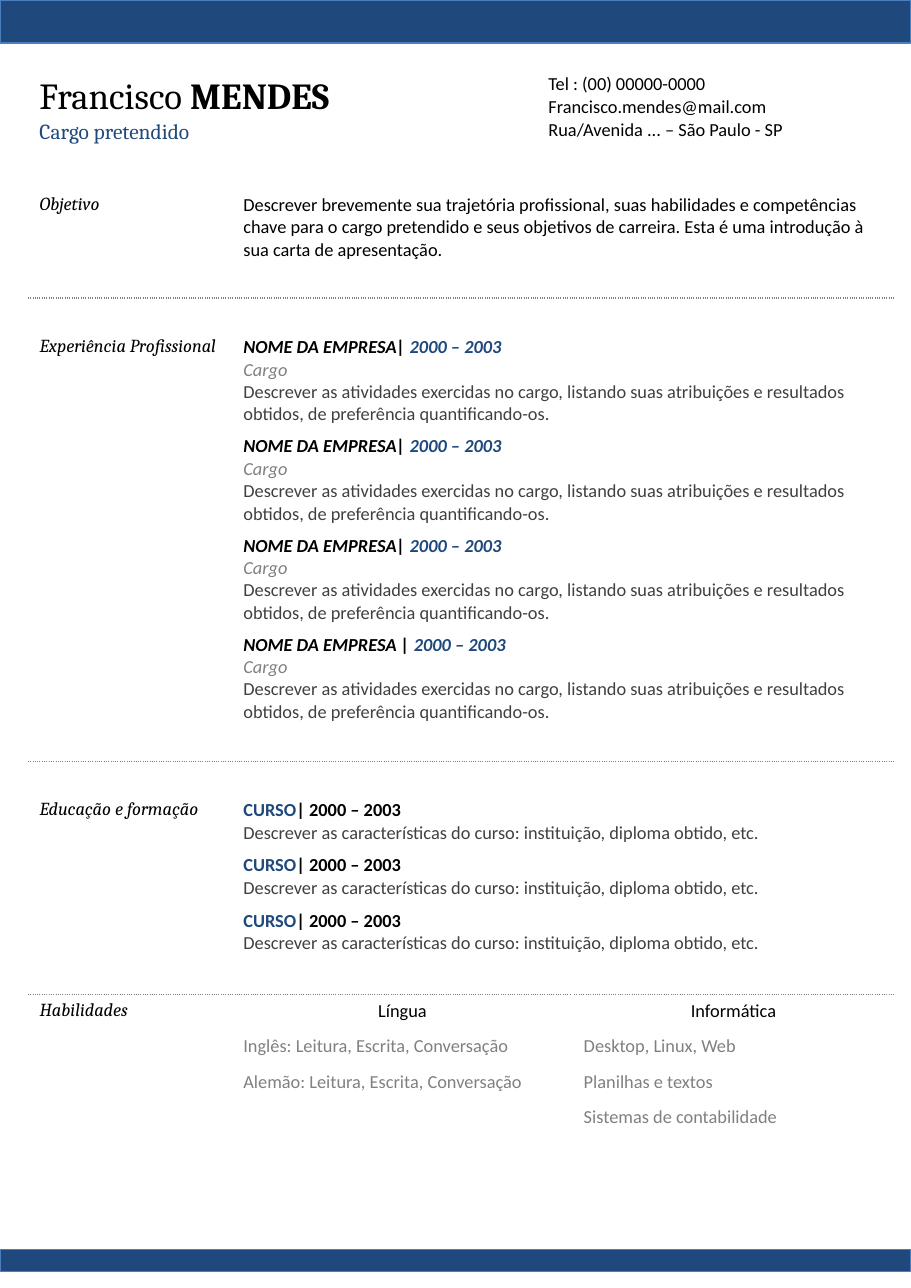
from dataclasses import dataclass

from lxml import etree
from pptx import Presentation
from pptx.dml.color import RGBColor
from pptx.enum import shapes, text
from pptx.oxml import ns
from pptx.util import Pt

NAVY = RGBColor(0x1F, 0x49, 0x7D)
BAND_EDGE = RGBColor(0x4B, 0x7E, 0xBC)
BLACK = RGBColor(0, 0, 0)
DARK_GREY = RGBColor(0x40, 0x40, 0x40)
GREY = RGBColor(0x80, 0x80, 0x80)
SERIF, SANS = "Cambria", "Calibri"
PAGE_WIDTH, PAGE_HEIGHT = 595.44, 841.68
LEFT, CONTACT_LEFT = 18.72, 351.36


@dataclass(frozen=True)
class Piece:
    """A stretch of text in one style."""
    wording: str
    color: RGBColor = BLACK
    font: str = SANS
    size: float = 12
    bold: bool = False
    italic: bool = False


Line = list[Piece]


@dataclass(frozen=True)
class Row:
    """A table row: height, side heading, content columns, ruled edge."""
    height: float
    heading: str = ""
    columns: tuple[list[Line], ...] = ()
    rule: str = ""
    centered: bool = False
    merged: bool = True


def write_lines(frame, lines: list[Line], centered: bool = False) -> None:
    for index, line in enumerate(lines):
        paragraph = frame.paragraphs[0] if index == 0 else frame.add_paragraph()
        paragraph.alignment = text.PP_ALIGN.CENTER if centered else text.PP_ALIGN.LEFT
        for piece in line:
            run = paragraph.add_run()
            run.text = piece.wording
            run.font.name, run.font.size = piece.font, Pt(piece.size)
            run.font.bold, run.font.italic = piece.bold, piece.italic
            run.font.color.rgb = piece.color


def add_band(slide, top: float, height: float) -> None:
    band = slide.shapes.add_shape(
        shapes.MSO_SHAPE.RECTANGLE, Pt(0), Pt(top), Pt(PAGE_WIDTH), Pt(height))
    band.shadow.inherit = False
    band.fill.solid()
    band.fill.fore_color.rgb = NAVY
    band.line.color.rgb = BAND_EDGE
    band.line.width = Pt(0.75)


def add_label(slide, left: float, top: float, width: float, height: float,
              line: Line) -> None:
    label = slide.shapes.add_textbox(Pt(left), Pt(top), Pt(width), Pt(height))
    label.text_frame.word_wrap = False
    label.text_frame.auto_size = text.MSO_AUTO_SIZE.SHAPE_TO_FIT_TEXT
    write_lines(label.text_frame, [line])


def rule_cell(cell, edge: str) -> None:
    """Draw a dotted border on the edge 'T' or 'B'."""
    border = etree.Element(ns.qn(f"a:ln{edge}"), w=str(Pt(1)))
    fill = etree.SubElement(border, ns.qn("a:solidFill"))
    etree.SubElement(fill, ns.qn("a:srgbClr"), val=str(GREY))
    etree.SubElement(border, ns.qn("a:prstDash"), val="sysDot")
    cell._tc.get_or_add_tcPr().insert(0, border)


def fill_row(table, index: int, row: Row) -> None:
    table.rows[index].height = Pt(row.height)
    cells = [table.cell(index, column) for column in range(3)]
    if row.merged:
        cells[1].merge(cells[2])
    heading = [[Piece(row.heading, font=SERIF, italic=True)]] if row.heading else []
    contents = [heading, *row.columns]
    for column, cell in enumerate(cells):
        cell.fill.background()
        cell.margin_bottom = Pt(0)
        if row.rule:
            rule_cell(cell, row.rule)
        lines = contents[column] if column < len(contents) else []
        if lines:
            write_lines(cell.text_frame, lines, row.centered and column > 0)
        else:
            # A small end mark keeps empty cells from stretching the row
            etree.SubElement(cell.text_frame.paragraphs[0]._p,
                             ns.qn("a:endParaRPr"), sz="1100")


def job_row(heading: str = "", separator: str = "| ") -> Row:
    return Row(64.8, heading, ([
        [Piece("NOME DA EMPRESA" + separator, bold=True, italic=True),
         Piece("2000 – 2003", NAVY, bold=True, italic=True)],
        [Piece("Cargo", GREY, italic=True)],
        [Piece("Descrever as atividades exercidas no cargo, listando suas "
               "atribuições e resultados obtidos, de preferência "
               "quantificando-os.", DARK_GREY)],
    ],))


def course_row(heading: str = "") -> Row:
    return Row(36, heading, ([
        [Piece("CURSO", NAVY, bold=True), Piece("| 2000 – 2003", bold=True)],
        [Piece("Descrever as características do curso: instituição, "
               "diploma obtido, etc.", DARK_GREY)],
    ],))


def skill_row(language: str, computing: str) -> Row:
    columns = tuple([[Piece(skill, GREY)]] if skill else []
                    for skill in (language, computing))
    return Row(23.1, columns=columns, merged=False)


OBJECTIVE = ("Descrever brevemente sua trajetória profissional, suas habilidades "
             "e competências chave para o cargo pretendido e seus objetivos de "
             "carreira. Esta é uma introdução à sua carta de apresentação.")
ROWS = [
    Row(51, "Objetivo", ([[Piece(OBJECTIVE)]],)),
    Row(20.6, rule="B"),
    Row(21.5, rule="T"),
    job_row("Experiência Profissional"),
    job_row(),
    job_row(),
    job_row(separator=" | "),
    Row(22.1, rule="B"),
    Row(21.4, rule="T"),
    course_row("Educação e formação"),
    course_row(),
    course_row(),
    Row(23.2, rule="B"),
    Row(23.1, "Habilidades", ([[Piece("Língua")]], [[Piece("Informática")]]),
        rule="T", centered=True, merged=False),
    skill_row("Inglês: Leitura, Escrita, Conversação", "Desktop, Linux, Web"),
    skill_row("Alemão: Leitura, Escrita, Conversação", "Planilhas e textos"),
    skill_row("", "Sistemas de contabilidade"),
]
COLUMN_WIDTHS = (133.2, 222.48, 210.24)
CONTACTS = [
    ("Tel : (00) 00000-0000", 118.8),
    ("Francisco.mendes@mail.com", 159.12),
    ("Rua/Avenida ... – São Paulo - SP", 169.2),
]


def main() -> None:
    resume = Presentation()
    resume.slide_width, resume.slide_height = Pt(PAGE_WIDTH), Pt(PAGE_HEIGHT)
    slide = resume.slides.add_slide(resume.slide_layouts[6])

    # Top and bottom bands
    add_band(slide, 0, 28.08)
    add_band(slide, 816.48, 14.4)

    # Name, position and contact details
    add_label(slide, LEFT, 43.92, 230.4, 36,
              [Piece("Francisco ", font=SERIF, size=24),
               Piece("MENDES", font=SERIF, size=24, bold=True)])
    add_label(slide, LEFT, 73.44, 123.12, 24.48,
              [Piece("Cargo pretendido", NAVY, SERIF, 14)])
    for index, (contact, width) in enumerate(CONTACTS):
        add_label(slide, CONTACT_LEFT, 43.92 + 14.76 * index, width, 21.6,
                  [Piece(contact)])

    # Résumé sections
    sections = slide.shapes.add_table(
        len(ROWS), len(COLUMN_WIDTHS), Pt(LEFT), Pt(123.12),
        Pt(sum(COLUMN_WIDTHS)), Pt(sum(row.height for row in ROWS))).table
    sections.first_row = sections.horz_banding = False
    for column, width in zip(sections.columns, COLUMN_WIDTHS):
        column.width = Pt(width)
    for index, row in enumerate(ROWS):
        fill_row(sections, index, row)

    resume.save("out.pptx")


if __name__ == "__main__":
    main()
